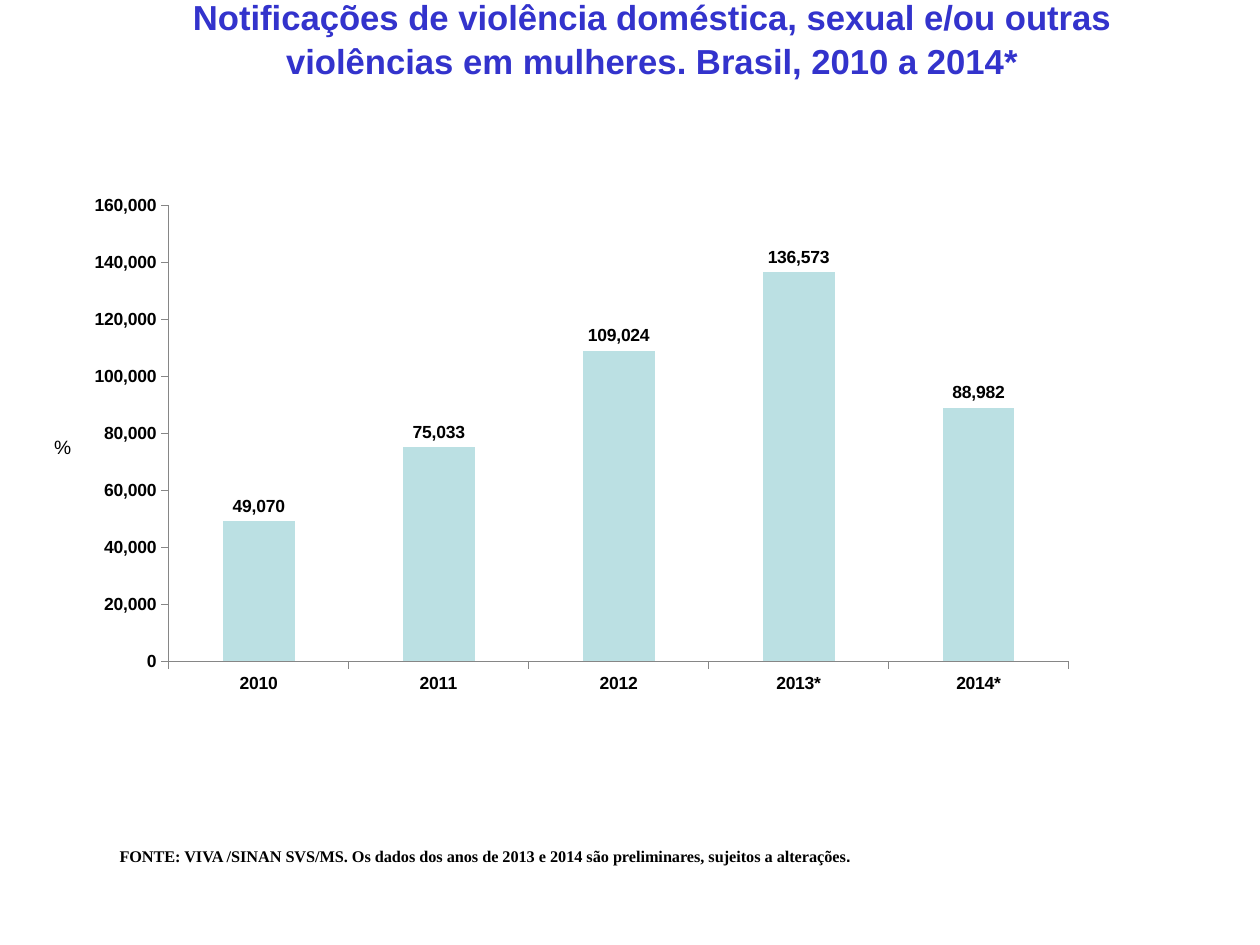
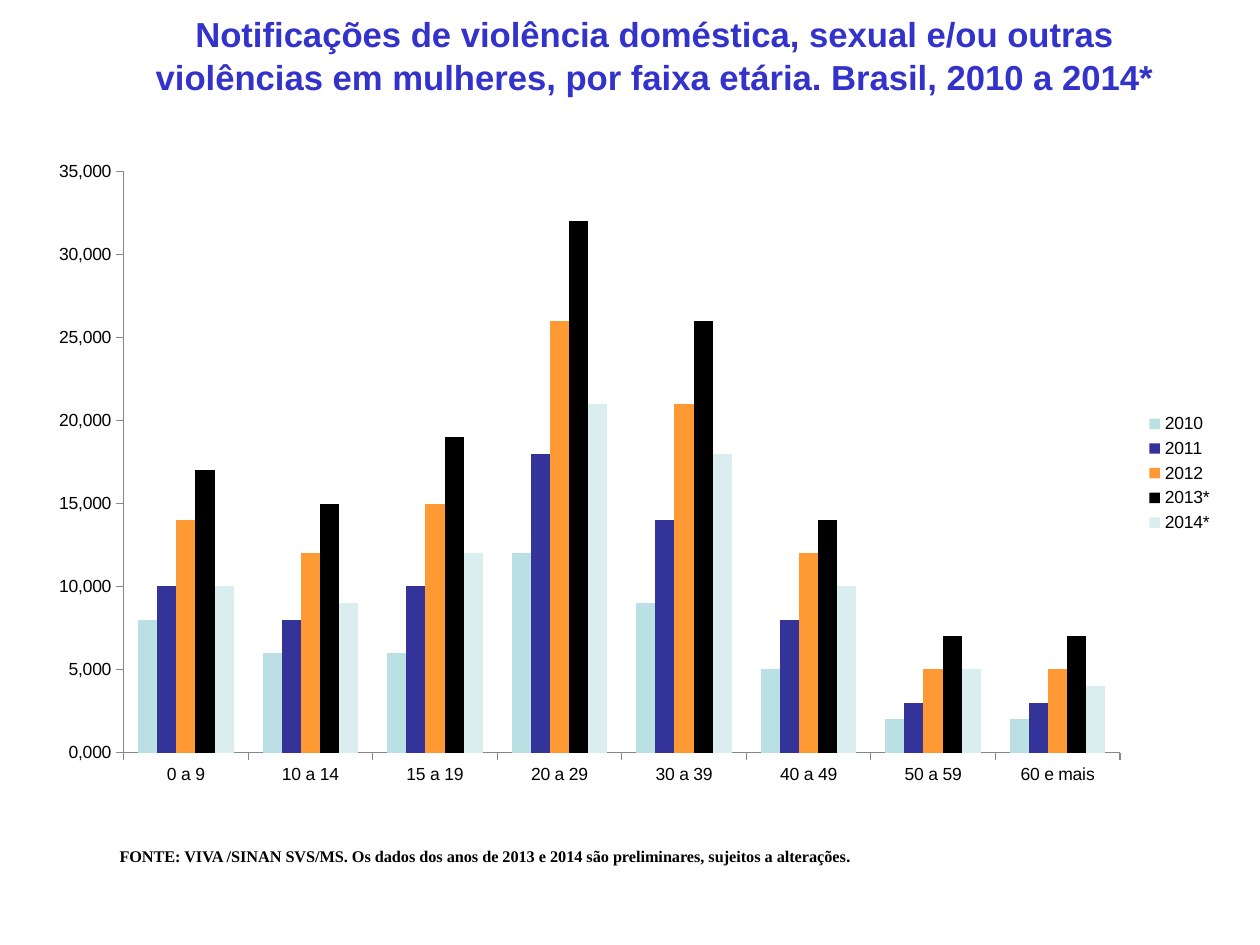
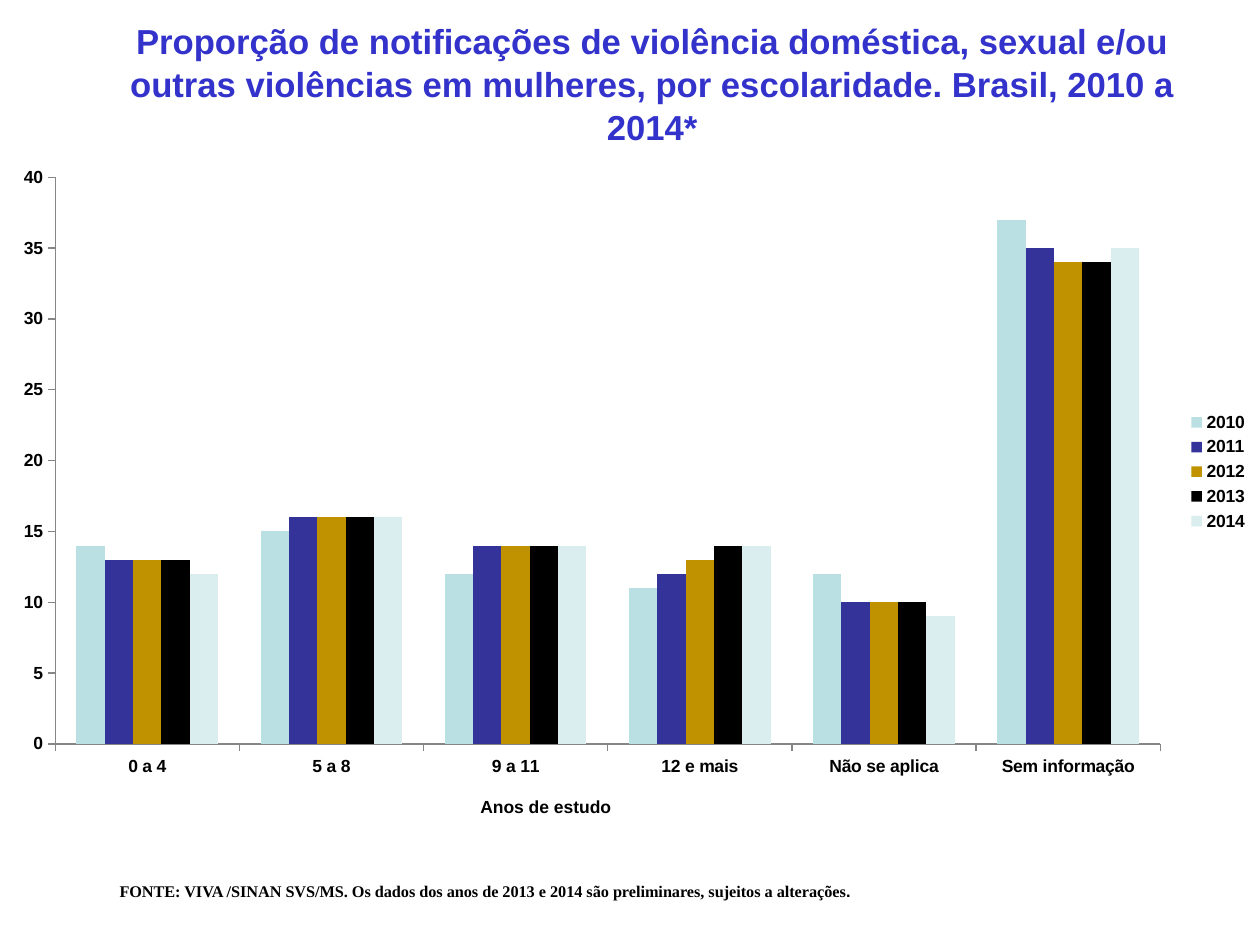
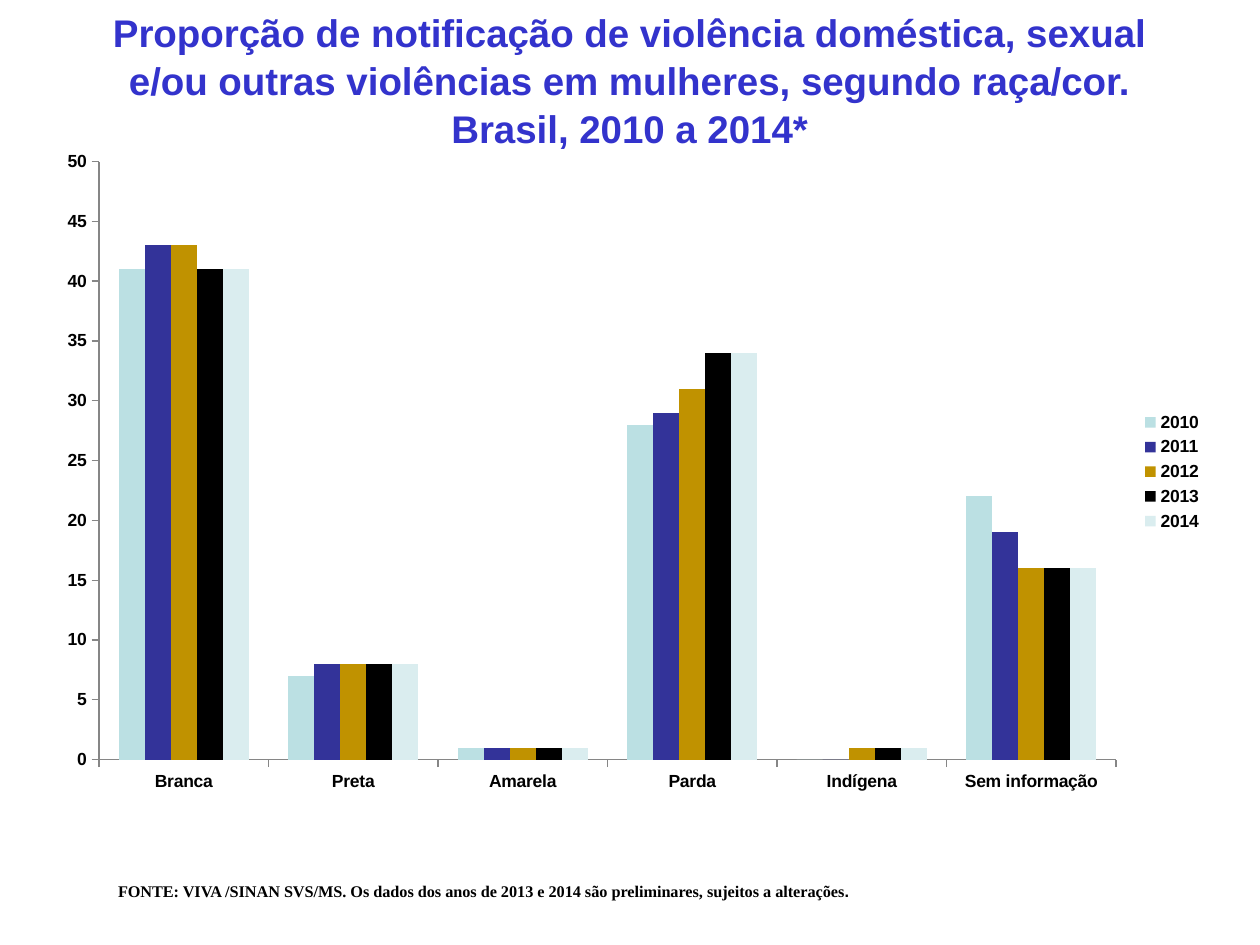
from dataclasses import dataclass

from pptx import Presentation
from pptx import util as u
from pptx.chart.data import CategoryChartData
from pptx.dml.color import RGBColor
from pptx.enum import chart as ch
from pptx.enum import text as t


@dataclass(frozen=True)
class Theme:
    title: str = "3333CC"
    ink: str = "000000"
    axis: str = "868686"
    aqua: str = "BBE0E3"
    indigo: str = "333399"
    orange: str = "FF9933"
    ochre: str = "C09200"
    pale: str = "DAEDEF"
    sans: str = "Arial"
    serif: str = "Times New Roman"
    title_size: float = 19.8
    large_title_size: float = 22
    source_size: float = 16
    unit_size: float = 11
    chart_size: float = 10


THEME = Theme()
SOURCE = ("FONTE: VIVA /SINAN SVS/MS. Os dados dos anos de 2013 e 2014 "
          "são preliminares, sujeitos a alterações")
AGE_COLOURS = (THEME.aqua, THEME.indigo, THEME.orange, THEME.ink, THEME.pale)
SHARE_COLOURS = (THEME.aqua, THEME.indigo, THEME.ochre, THEME.ink, THEME.pale)
RAISED_TITLE = {"size": THEME.title_size, "bottom": 1.78}
LARGE_TITLE = {"size": THEME.large_title_size, "bottom": 0.13}

SLIDES = [
    {
        "title": "Notificações de violência doméstica, sexual e/ou outras "
                 "violências em mulheres. Brasil, 2010 a 2014*",
        "title_box": (2.16, 0, 21.97, 3.18),
        "title_style": RAISED_TITLE,
        "source_at": (2.16, 16.87),
        "chart_box": (1.5, 3.73, 20.45, 10.46),
        "categories": ["2010", "2011", "2012", "2013*", "2014*"],
        "series": {"Series 1": (49070, 75033, 109024, 136573, 88982)},
        "colours": (THEME.aqua,),
        "scale": (160000, 20000, "#,##0"),
        "bold": True,
        "labels": True,
        "note": {"text": "%", "box": (0.84, 8.66, 1.32, 1.78),
                 "size": THEME.unit_size, "bold": False,
                 "align": t.PP_ALIGN.LEFT},
    },
    {
        "title": "Notificações de violência doméstica, sexual e/ou outras "
                 "violências em mulheres, por faixa etária. Brasil, 2010 a 2014*",
        "title_box": (2.21, 0.33, 21.97, 3.18),
        "title_style": RAISED_TITLE,
        "source_at": (2.16, 16.87),
        "chart_box": (0.71, 3, 24, 13.08),
        "categories": ["0 a 9", "10 a 14", "15 a 19", "20 a 29",
                       "30 a 39", "40 a 49", "50 a 59", "60 e mais"],
        "series": {
            "2010": (8000, 6000, 6000, 12000, 9000, 5000, 2000, 2000),
            "2011": (10000, 8000, 10000, 18000, 14000, 8000, 3000, 3000),
            "2012": (14000, 12000, 15000, 26000, 21000, 12000, 5000, 5000),
            "2013*": (17000, 15000, 19000, 32000, 26000, 14000, 7000, 7000),
            "2014*": (10000, 9000, 12000, 21000, 18000, 10000, 5000, 4000),
        },
        "colours": AGE_COLOURS,
        "scale": (35000, 5000, "0,000"),
        "bold": False,
    },
    {
        "title": "Proporção de notificações de violência doméstica, sexual e/ou "
                 "outras violências em mulheres, por escolaridade. "
                 "Brasil, 2010 a 2014*",
        "title_box": (2.16, 0.91, 21.97, 3.18),
        "title_style": RAISED_TITLE,
        "source_at": (2.16, 17.58),
        "chart_box": (-0.03, 3.12, 25.45, 12.78),
        "categories": ["0 a 4", "5 a 8", "9 a 11", "12 e mais",
                       "Não se aplica", "Sem informação"],
        "series": {
            "2010": (14, 15, 12, 11, 12, 37),
            "2011": (13, 16, 14, 12, 10, 35),
            "2012": (13, 16, 14, 13, 10, 34),
            "2013": (13, 16, 14, 14, 10, 34),
            "2014": (12, 16, 14, 14, 9, 35),
        },
        "colours": SHARE_COLOURS,
        "scale": (40, 5, "General"),
        "bold": True,
        "note": {"text": "Anos de estudo", "box": (7.9, 15.93, 6.2, 0.69),
                 "size": THEME.chart_size, "bold": True,
                 "align": t.PP_ALIGN.CENTER},
    },
    {
        "title": "Proporção de notificação de violência doméstica, sexual e/ou "
                 "outras violências em mulheres, segundo raça/cor. "
                 "Brasil, 2010 a 2014*",
        "title_box": (1.9, 0, 21.59, 3.18),
        "title_style": LARGE_TITLE,
        "source_at": (2.13, 17.58),
        "chart_box": (0.89, 2.79, 23.6, 13.44),
        "categories": ["Branca", "Preta", "Amarela", "Parda",
                       "Indígena", "Sem informação"],
        "series": {
            "2010": (41, 7, 1, 28, 0, 22),
            "2011": (43, 8, 1, 29, 0, 19),
            "2012": (43, 8, 1, 31, 1, 16),
            "2013": (41, 8, 1, 34, 1, 16),
            "2014": (41, 8, 1, 34, 1, 16),
        },
        "colours": SHARE_COLOURS,
        "scale": (50, 5, "General"),
        "bold": True,
    },
]


def apply(target, values):
    for attribute, value in values.items():
        setattr(target, attribute, value)


def cm(box):
    return [u.Cm(length) for length in box]


def style_font(font, size, bold, colour=THEME.ink, name=THEME.sans):
    apply(font, {"size": u.Pt(size), "bold": bold, "name": name})
    font.color.rgb = RGBColor.from_string(colour)


def add_title(slide, content):
    heading = slide.shapes.title
    style = content["title_style"]
    apply(heading, dict(zip(("left", "top", "width", "height"),
                            cm(content["title_box"]))))
    frame = heading.text_frame
    frame.text = content["title"]
    apply(frame, {"word_wrap": True, "auto_size": t.MSO_AUTO_SIZE.NONE,
                  "vertical_anchor": t.MSO_ANCHOR.MIDDLE,
                  "margin_bottom": u.Cm(style["bottom"])})
    line = frame.paragraphs[0]
    apply(line, {"alignment": t.PP_ALIGN.CENTER, "line_spacing": 1.04})
    style_font(line.runs[0].font, style["size"], True, THEME.title)


def add_source(slide, corner):
    frame = slide.shapes.add_textbox(*cm(corner + (17.68, 1.4))).text_frame
    apply(frame, {"word_wrap": False,
                  "auto_size": t.MSO_AUTO_SIZE.SHAPE_TO_FIT_TEXT})
    for words, name in ((SOURCE, THEME.serif), (".", THEME.sans)):
        run = frame.paragraphs[0].add_run()
        run.text = words
        style_font(run.font, THEME.source_size, True, name=name)
        run._r.get_or_add_rPr().set("baseline", "30000")


def add_note(slide, note):
    frame = slide.shapes.add_textbox(*cm(note["box"])).text_frame
    frame.word_wrap = True
    line = frame.paragraphs[0]
    line.alignment = note["align"]
    run = line.add_run()
    run.text = note["text"]
    style_font(run.font, note["size"], note["bold"])


def add_columns(slide, content):
    maximum, step, number_format = content["scale"]
    data = CategoryChartData(number_format=number_format)
    data.categories = content["categories"]
    for name, values in content["series"].items():
        data.add_series(name, values)
    chart = slide.shapes.add_chart(ch.XL_CHART_TYPE.COLUMN_CLUSTERED,
                                   *cm(content["chart_box"]), data).chart
    apply(chart, {"has_title": False, "has_legend": len(content["series"]) > 1})
    style_font(chart.font, THEME.chart_size, content["bold"])
    if chart.has_legend:
        apply(chart.legend, {"position": ch.XL_LEGEND_POSITION.RIGHT,
                             "include_in_layout": False})

    for axis in (chart.category_axis, chart.value_axis):
        apply(axis, {"has_major_gridlines": False,
                     "major_tick_mark": ch.XL_TICK_MARK.OUTSIDE,
                     "minor_tick_mark": ch.XL_TICK_MARK.NONE})
        axis.format.line.width = u.Pt(0.75)
        axis.format.line.color.rgb = RGBColor.from_string(THEME.axis)
    apply(chart.value_axis, {"minimum_scale": 0, "maximum_scale": maximum,
                             "major_unit": step})
    apply(chart.value_axis.tick_labels, {"number_format": number_format,
                                         "number_format_is_linked": False})

    columns = chart.plots[0]
    apply(columns, {"gap_width": 150, "overlap": 0, "vary_by_categories": False})
    for year, colour in zip(columns.series, content["colours"]):
        year.format.fill.solid()
        year.format.fill.fore_color.rgb = RGBColor.from_string(colour)
    if content.get("labels"):
        columns.has_data_labels = True
        apply(columns.data_labels, {
            "show_value": True, "number_format": number_format,
            "number_format_is_linked": False,
            "position": ch.XL_LABEL_POSITION.OUTSIDE_END})


def main():
    deck = Presentation()
    apply(deck, {"slide_width": u.Cm(25.4), "slide_height": u.Cm(19.05)})
    for content in SLIDES:
        slide = deck.slides.add_slide(deck.slide_layouts.get_by_name("Title Only"))
        add_title(slide, content)
        add_source(slide, content["source_at"])
        add_columns(slide, content)
        if "note" in content:
            add_note(slide, content["note"])
    deck.save("out.pptx")


if __name__ == "__main__":
    main()
